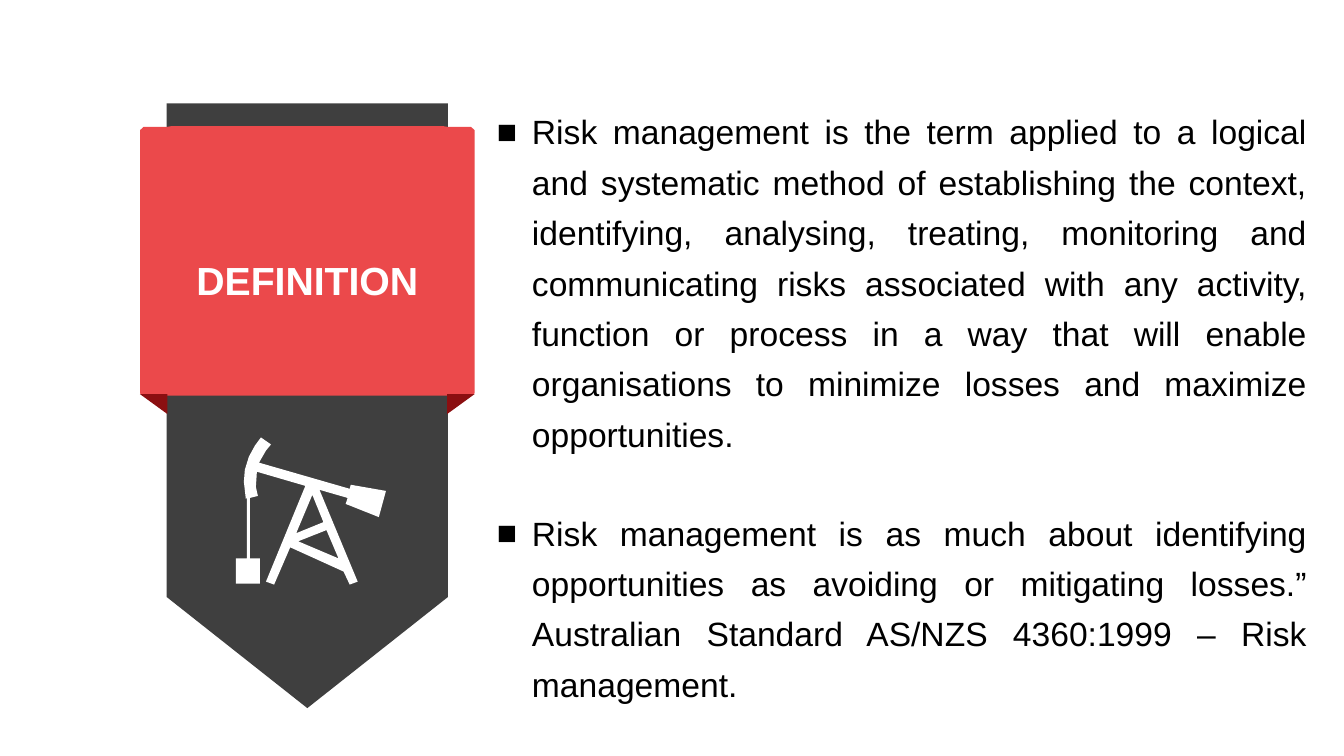
import lxml.etree
import pptx
import pptx.dml.color
import pptx.enum.shapes
import pptx.enum.text
import pptx.oxml.ns
import pptx.util

Pt = pptx.util.Pt
CHARCOAL = pptx.dml.color.RGBColor(0x3F, 0x3F, 0x3F)
RED = pptx.dml.color.RGBColor(0xEB, 0x49, 0x4B)
DARK_RED = pptx.dml.color.RGBColor(0x8B, 0x0F, 0x11)
WHITE = pptx.dml.color.RGBColor(0xFF, 0xFF, 0xFF)
BLACK = pptx.dml.color.RGBColor(0, 0, 0)

TITLE_FONT = {"name": "Arial", "size": Pt(28), "bold": True}
BODY_FONT = {"name": "Arial", "size": Pt(24)}
BODY_PARAGRAPH = {"alignment": pptx.enum.text.PP_ALIGN.JUSTIFY, "line_spacing": 1.25}
BLANK_LINE = Pt(34.5)

STATEMENTS = [
    "Risk management is the term applied to a logical and systematic method of "
    "establishing the context, identifying, analysing, treating, monitoring and "
    "communicating risks associated with any activity, function or process in a way "
    "that will enable organisations to minimize losses and maximize opportunities. ",
    "Risk management is as much about identifying opportunities as avoiding or "
    "mitigating losses.” Australian Standard AS/NZS 4360:1999 – Risk management.",
]

PUMP_OUTLINE = [
    (18, 0), (25.2, 5), (21.6, 9.4), (16.6, 18), (81.4, 36.7), (82.1, 33.8),
    (107.3, 38.2), (102.2, 56.9), (78.5, 47.5), (79.9, 43.2), (59.8, 37.4),
    (87.1, 103), (81.4, 105.1), (77, 95.8), (38.9, 78.5), (27.4, 105.1),
    (21.6, 103), (49.7, 34.6), (15.1, 24.5), (14.4, 35.3), (15.8, 41.8),
    (10.1, 43.2), (10.1, 86.4), (17.3, 86.4), (17.3, 104.4), (0, 104.4),
    (0, 86.4), (7.9, 86.4), (7.9, 43.2), (7.2, 43.9), (5.8, 31.7), (6.5, 23),
    (9.4, 13.7), (13.7, 5.8),
]
PUMP_LOWER_GAP = [(44.6, 74.2), (73.4, 86.4), (64.8, 66.2)]
PUMP_UPPER_GAP = [(54.7, 41), (43.2, 68.4), (62.6, 60.5)]


def set_format(target, values):
    """Set every attribute listed in values on target."""
    for attribute, value in values.items():
        setattr(target, attribute, value)


def paint(shape, color):
    """Give a shape a flat fill without line or shadow."""
    shape.shadow.inherit = False
    shape.fill.solid()
    shape.fill.fore_color.rgb = color
    shape.line.fill.background()


def draw_outline(shapes, left, top, contours, color):
    """Draw closed contours offset from left and top."""
    builder = None
    for contour in contours:
        corners = [(Pt(left + x), Pt(top + y)) for x, y in contour]
        if builder is None:
            builder = shapes.build_freeform(*corners[0], scale=1.0)
        else:
            builder.move_to(*corners[0])
        builder.add_line_segments(corners[1:], close=True)
    paint(builder.convert_to_shape(), color)


def add_text_frame(shapes, left, top, width, height):
    """Add a wrapping text box and return its frame."""
    frame = shapes.add_textbox(Pt(left), Pt(top), Pt(width), Pt(height)).text_frame
    set_format(frame, {
        "word_wrap": True,
        "auto_size": pptx.enum.text.MSO_AUTO_SIZE.SHAPE_TO_FIT_TEXT,
    })
    return frame


def write_text(paragraph, text, font_format, color):
    """Add one formatted run to a paragraph."""
    run = paragraph.add_run()
    run.text = text
    set_format(run.font, font_format)
    run.font.color.rgb = color


def add_badge(slide, left, top, width, height):
    """Build the pointed banner with its ribbon, title and pump."""
    parts = slide.shapes.add_group_shape().shapes
    banner_width, fold = 201, 19.5
    banner = parts.add_shape(
        pptx.enum.shapes.MSO_SHAPE.PENTAGON,
        Pt(left + (width - height) / 2), Pt(top + (height - banner_width) / 2),
        Pt(height), Pt(banner_width))
    banner.rotation = 90
    banner.adjustments[0] = 0.395
    paint(banner, CHARCOAL)

    ribbon_top, ribbon_height = top + 16.2, 192.5
    ribbon = [
        (0, 3), (2.5, 0.7), (19, 0.7), (23, 0), (width - 23, 0), (width - 19, 0.7),
        (width - 2.5, 0.7), (width, 3), (width, ribbon_height - 1.5),
        (width - 3, ribbon_height), (3, ribbon_height), (0, ribbon_height - 1.5),
    ]
    draw_outline(parts, left, ribbon_top, [ribbon], RED)
    fold_top = ribbon_top + ribbon_height - 1
    for outer, inner in ((0, fold), (width, width - fold)):
        draw_outline(parts, left, fold_top,
                     [[(outer, 0), (inner, 0), (inner, 14.2)]], DARK_RED)

    title = add_text_frame(parts, left + 26.6, top + 105.5, 185.8, 41).paragraphs[0]
    title.alignment = pptx.enum.text.PP_ALIGN.CENTER
    write_text(title, "DEFINITION", TITLE_FONT, WHITE)
    draw_outline(parts, left + 68.4, top + 238.7,
                 [PUMP_OUTLINE, PUMP_LOWER_GAP, PUMP_UPPER_GAP], WHITE)


def add_square_bullet(paragraph):
    """Give a paragraph a hanging square bullet."""
    properties = paragraph._p.get_or_add_pPr()
    properties.set("marL", str(Pt(34.5)))
    properties.set("indent", str(Pt(-25)))
    for tag, key, value in (("a:buFont", "typeface", "Arial"), ("a:buChar", "char", "■")):
        lxml.etree.SubElement(properties, pptx.oxml.ns.qn(tag)).set(key, value)


def add_statements(slide, left, top, width, height):
    """Write the bulleted statements in the middle of the box."""
    frame = add_text_frame(slide.shapes, left, top, width, height)
    frame.vertical_anchor = pptx.enum.text.MSO_ANCHOR.MIDDLE
    for position, statement in enumerate(STATEMENTS):
        paragraph = frame.add_paragraph() if position else frame.paragraphs[0]
        set_format(paragraph, BODY_PARAGRAPH)
        if position:
            paragraph.space_before = BLANK_LINE
        add_square_bullet(paragraph)
        write_text(paragraph, statement, BODY_FONT, BLACK)


def main():
    """Build the definition slide and save it."""
    deck = pptx.Presentation()
    set_format(deck, {"slide_width": Pt(960), "slide_height": Pt(540)})
    slide = deck.slides.add_slide(deck.slide_layouts[6])
    add_badge(slide, 100, 73.8, 239, 432)
    add_statements(slide, 338.4, 76.3, 602, 422.6)
    deck.save("out.pptx")


if __name__ == "__main__":
    main()
